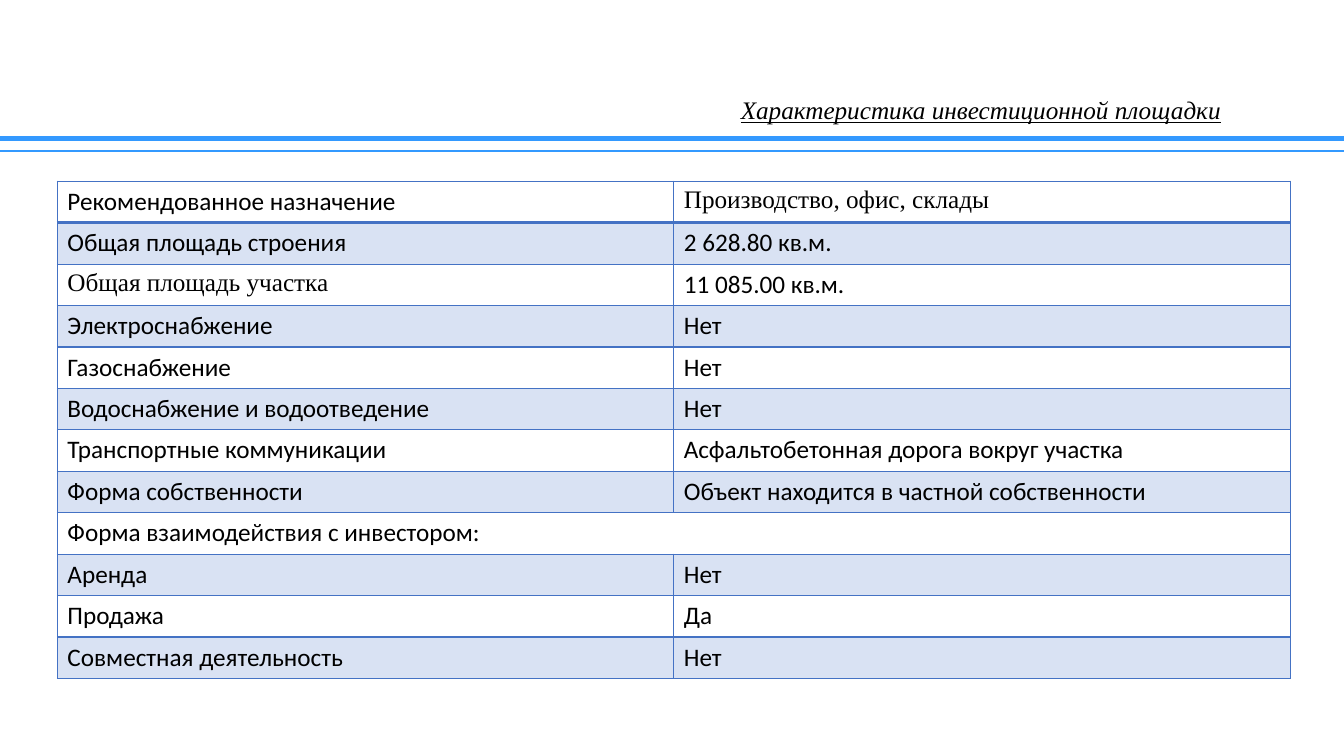
from lxml import etree
from pptx import Presentation
from pptx.dml.color import RGBColor
from pptx.enum.shapes import MSO_CONNECTOR
from pptx.enum.text import MSO_ANCHOR, PP_ALIGN
from pptx.oxml.ns import qn
from pptx.util import Pt

STRAIGHT = MSO_CONNECTOR.STRAIGHT
MIDDLE = MSO_ANCHOR.MIDDLE
LEFT, CENTER = PP_ALIGN.LEFT, PP_ALIGN.CENTER

SLIDE_WIDTH, SLIDE_HEIGHT = 960, 540
SANS, SERIF = "Calibri", "Times New Roman"
RULE_BLUE, TABLE_BLUE, BLACK = "3399FF", "4472C4", "000000"
BAND_ALPHA = 20

# Label, value; a value of None makes the label span both columns
SITE_FACTS = [
    ("Рекомендованное назначение", "Производство, офис, склады"),
    ("Общая площадь строения", "2 628.80 кв.м."),
    ("Общая площадь участка", "11 085.00 кв.м."),
    ("Электроснабжение", "Нет"),
    ("Газоснабжение", "Нет"),
    ("Водоснабжение и водоотведение", "Нет"),
    ("Транспортные коммуникации", "Асфальтобетонная дорога вокруг участка"),
    ("Форма собственности", "Объект находится в частной собственности"),
    ("Форма взаимодействия с инвестором:", None),
    ("Аренда", "Нет"),
    ("Продажа", "Да"),
    ("Совместная деятельность", "Нет"),
]
SERIF_CELLS = {(0, 1), (2, 0)}


def color(value):
    return RGBColor.from_string(value)


def write_text(frame, text, font=SANS, size=18, fill=BLACK, align=LEFT,
               spacing=1.0, italic=False, underline=False):
    para = frame.paragraphs[0]
    para.alignment = align
    para.line_spacing = spacing
    span = para.add_run()
    span.text = text
    span.font.name = font
    span.font.size = Pt(size)
    span.font.color.rgb = color(fill)
    span.font.italic = italic
    span.font.underline = underline


def set_borders(cell, fill, widths):
    """Draw the left, right, top and bottom borders, in that order."""
    properties = cell._tc.get_or_add_tcPr()
    for position, (side, width) in enumerate(zip("LRTB", widths)):
        border = etree.Element(qn(f"a:ln{side}"), w=str(Pt(width)))
        solid = etree.SubElement(border, qn("a:solidFill"))
        etree.SubElement(solid, qn("a:srgbClr"), val=fill)
        properties.insert(position, border)


class SlideBuilder:
    def __init__(self, page):
        self.page = page

    def rule(self, top, width):
        line = self.page.shapes.add_connector(
            STRAIGHT, Pt(0), Pt(top), Pt(SLIDE_WIDTH), Pt(top))
        line.line.color.rgb = color(RULE_BLUE)
        line.line.width = Pt(width)
        etree.SubElement(line._element.spPr, qn("a:effectLst"))

    def title(self, text, left, top, width, height):
        box = self.page.shapes.add_textbox(Pt(left), Pt(top), Pt(width), Pt(height))
        box.text_frame.word_wrap = True
        box.text_frame.vertical_anchor = MIDDLE
        write_text(box.text_frame, text, font=SERIF, align=CENTER,
                   spacing=0.9, italic=True, underline=True)

    def table(self, facts, left, top, width, row_height):
        table = self.page.shapes.add_table(
            len(facts), 2, Pt(left), Pt(top), Pt(width),
            Pt(row_height * len(facts))).table
        table.first_row = table.horz_banding = False
        for column in table.columns:
            column.width = Pt(width / 2)
        for row, fact in enumerate(facts):
            table.rows[row].height = Pt(row_height)
            if fact[1] is None:
                table.cell(row, 0).merge(table.cell(row, 1))
            for column, text in enumerate(fact):
                self.cell(table.cell(row, column), text, row, column)

    def cell(self, cell, text, row, column):
        if text is not None:
            font = SERIF if (row, column) in SERIF_CELLS else SANS
            write_text(cell.text_frame, text, font=font)
        # Every second row is a translucent band
        if row % 2:
            cell.fill.solid()
            cell.fill.fore_color.rgb = color(TABLE_BLUE)
            shade = cell._tc.tcPr.find(".//" + qn("a:srgbClr"))
            etree.SubElement(shade, qn("a:alpha"), val=str(BAND_ALPHA * 1000))
        else:
            cell.fill.background()
        # The line under the first row is heavier
        upper = 2 if row == 1 else 1
        lower = 2 if row == 0 else 1
        set_borders(cell, TABLE_BLUE, (1, 1, upper, lower))


def main():
    deck = Presentation()
    deck.slide_width, deck.slide_height = Pt(SLIDE_WIDTH), Pt(SLIDE_HEIGHT)
    builder = SlideBuilder(deck.slides.add_slide(deck.slide_layouts[6]))

    # Heading and double rule
    builder.rule(top=99, width=3.5)
    builder.rule(top=108, width=1.5)
    builder.title("Характеристика инвестиционной площадки",
                  left=480, top=70, width=441.4, height=19.4)

    # Site characteristics
    builder.table(SITE_FACTS, left=41, top=129.5, width=880.6, row_height=29.6)

    deck.save("out.pptx")


if __name__ == "__main__":
    main()
